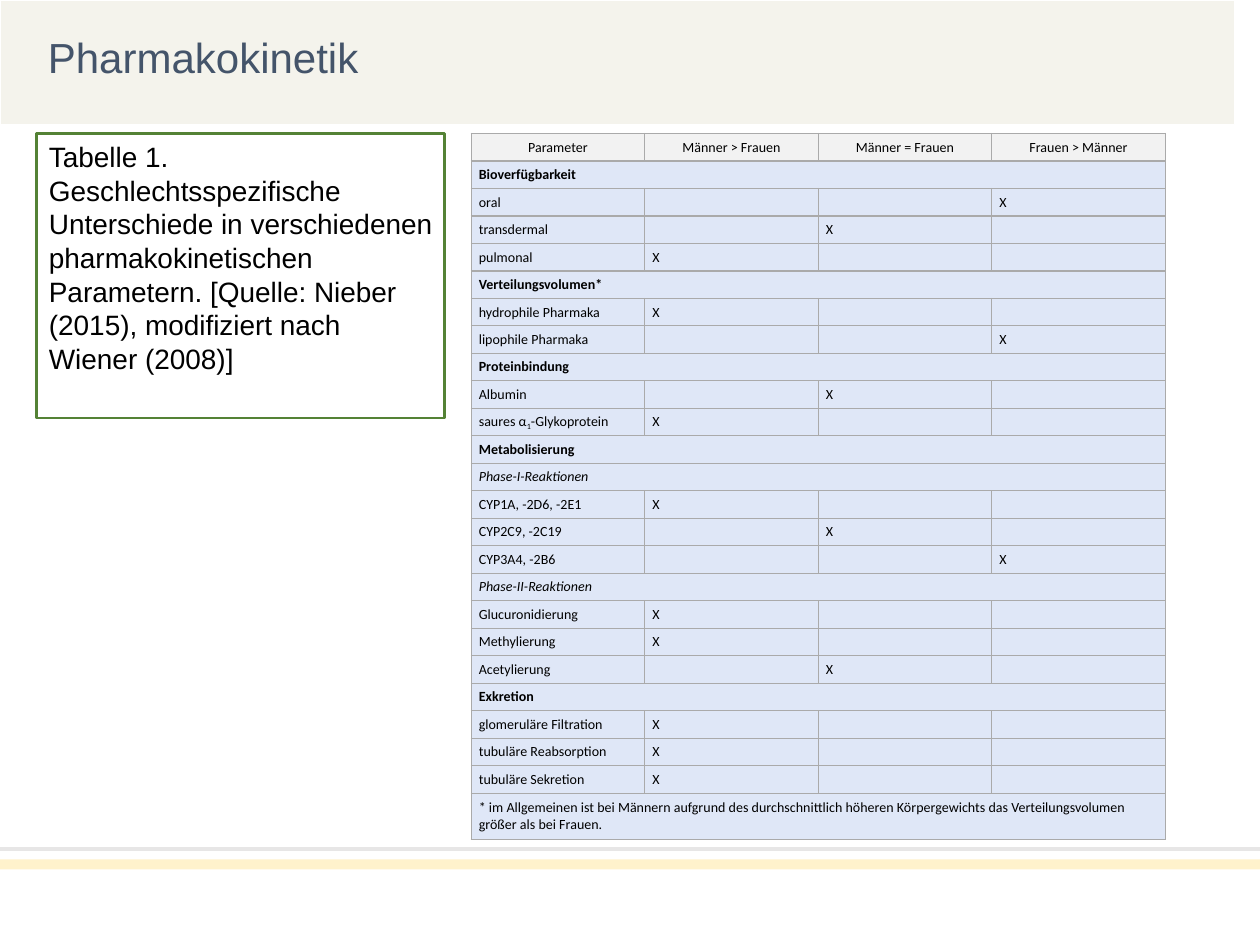
import pptx
import pptx.dml.color
import pptx.enum.shapes
import pptx.enum.text
import pptx.oxml
import pptx.oxml.ns
import pptx.util
from pptx.util import Inches, Pt


def color(hex_string):
    return pptx.dml.color.RGBColor.from_string(hex_string)


def add_rectangle(shapes, left, top, width, height, fill=None, line=None, line_width=0.75):
    shape = shapes.add_shape(pptx.enum.shapes.MSO_SHAPE.RECTANGLE,
                             Inches(left), Inches(top), Inches(width), Inches(height))
    shape.shadow.inherit = False
    if fill:
        shape.fill.solid()
        shape.fill.fore_color.rgb = color(fill)
    else:
        shape.fill.background()
    if line:
        shape.line.color.rgb = color(line)
        shape.line.width = Pt(line_width)
    else:
        shape.line.fill.background()
    return shape


SLIDE_WIDTH, SLIDE_HEIGHT = 10, 7.5
CONTENT_TOP = 1.06

presentation = pptx.Presentation()
presentation.slide_width = Inches(SLIDE_WIDTH)
presentation.slide_height = Inches(SLIDE_HEIGHT)
slide = presentation.slides.add_slide(presentation.slide_layouts[5])
shapes = slide.shapes

# Header band and footer stripes
add_rectangle(shapes, 0, 0, 0.98 * SLIDE_WIDTH, 0.99, "F4F3EC", "FFFFFF")
footer_line = shapes.add_connector(pptx.enum.shapes.MSO_CONNECTOR.STRAIGHT,
                                   0, Inches(6.74), Inches(SLIDE_WIDTH), Inches(6.74))
footer_line.line.color.rgb = color("E7E6E6")
footer_line.line.width = Pt(2)
pptx.oxml.ns.qn("a:effectLst")
footer_line._element.spPr.append(pptx.oxml.parse_xml(
    f'<a:effectLst {pptx.oxml.ns.nsdecls("a")}/>'))
add_rectangle(shapes, 0, 6.82, SLIDE_WIDTH, 0.08, "FFF2CC")

# Title, brought in front of the header band
title = shapes.title
title.left, title.top, title.width, title.height = map(Inches, (0.28, 0.2, 5.35, 0.5))
title.text_frame.text = "Pharmakokinetik"
title.text_frame.auto_size = pptx.enum.text.MSO_AUTO_SIZE.NONE
title.text_frame.vertical_anchor = pptx.enum.text.MSO_ANCHOR.MIDDLE
paragraph = title.text_frame.paragraphs[0]
paragraph.alignment = pptx.enum.text.PP_ALIGN.LEFT
paragraph.font.name = "Arial"
paragraph.font.size = Pt(24)
paragraph.font.color.rgb = color("44546A")
shapes._spTree.append(title._element)

# Table contents: label and column of the X, or the style of a full-width row
HEADERS = ["Parameter", "Männer > Frauen", "Männer = Frauen", "Frauen > Männer"]
MEN, EQUAL, WOMEN = 1, 2, 3
ROWS = [
    ("Bioverfügbarkeit", "bold"),
    ("oral", WOMEN),
    ("transdermal", EQUAL),
    ("pulmonal", MEN),
    ("Verteilungsvolumen*", "bold"),
    ("hydrophile Pharmaka", MEN),
    ("lipophile Pharmaka", WOMEN),
    ("Proteinbindung", "bold"),
    ("Albumin", EQUAL),
    ("saures α_1_-Glykoprotein", MEN),
    ("Metabolisierung", "bold"),
    ("Phase-I-Reaktionen", "italic"),
    ("CYP1A, -2D6, -2E1", MEN),
    ("CYP2C9, -2C19", EQUAL),
    ("CYP3A4, -2B6", WOMEN),
    ("Phase-II-Reaktionen", "italic"),
    ("Glucuronidierung", MEN),
    ("Methylierung", MEN),
    ("Acetylierung", EQUAL),
    ("Exkretion", "bold"),
    ("glomeruläre Filtration", MEN),
    ("tubuläre Reabsorption", MEN),
    ("tubuläre Sekretion", MEN),
    ("* im Allgemeinen ist bei Männern aufgrund des durchschnittlich höheren "
     "Körpergewichts das Verteilungsvolumen größer als bei Frauen.", "note"),
]
TABLE_WIDTH, TABLE_HEIGHT, NOTE_HEIGHT = 5.51, 5.61, 0.37

# Table grid: equal columns, equal rows above the taller note
table = shapes.add_table(len(ROWS) + 1, len(HEADERS), Inches(3.74), Inches(CONTENT_TOP),
                         Inches(TABLE_WIDTH), Inches(TABLE_HEIGHT)).table
table.first_row = table.horz_banding = False
for column in table.columns:
    column.width = Inches(TABLE_WIDTH / len(HEADERS))
for row in table.rows:
    row.height = Inches((TABLE_HEIGHT - NOTE_HEIGHT) / len(ROWS))
table.rows[len(ROWS)].height = Inches(NOTE_HEIGHT)

# Table cells
for row_index in range(len(ROWS) + 1):
    label, kind = ROWS[row_index - 1] if row_index else ("", "header")
    for column_index, header in enumerate(HEADERS):
        cell = table.cell(row_index, column_index)
        cell.margin_left = cell.margin_right = Inches(0.06)
        cell.margin_top = cell.margin_bottom = Inches(0.03)
        cell.vertical_anchor = pptx.enum.text.MSO_ANCHOR.MIDDLE
        for side in ("lnL", "lnR", "lnT", "lnB"):
            cell._tc.get_or_add_tcPr().append(pptx.oxml.parse_xml(
                f'<a:{side} {pptx.oxml.ns.nsdecls("a")} w="{Pt(0.75)}">'
                f'<a:solidFill><a:srgbClr val="AAAAAA"/></a:solidFill></a:{side}>'))
        cell.fill.solid()
        cell.fill.fore_color.rgb = color("F2F2F2" if kind == "header" else "DFE7F7")

        paragraph = cell.text_frame.paragraphs[0]
        paragraph.font.name = "Calibri"
        paragraph.font.size = Pt(8)
        paragraph.font.color.rgb = color("000000")
        if kind == "header":
            paragraph.alignment = pptx.enum.text.PP_ALIGN.CENTER
            paragraph.add_run().text = header
        elif column_index == 0:
            paragraph.font.bold = kind == "bold"
            paragraph.font.italic = kind == "italic"
            # Text between underscores is a subscript
            for part_index, part in enumerate(label.split("_")):
                run = paragraph.add_run()
                run.text = part
                if part_index % 2:
                    run._r.get_or_add_rPr().set("baseline", "-25000")
        elif column_index == kind:
            paragraph.add_run().text = "X"
    if kind in ("bold", "italic", "note"):
        table.cell(row_index, 0).merge(table.cell(row_index, len(HEADERS) - 1))

# Caption box
caption = add_rectangle(shapes, 0.29, CONTENT_TOP, 3.24, 2.26, line="548235", line_width=1.5)
caption.text_frame.word_wrap = True
caption.text_frame.vertical_anchor = pptx.enum.text.MSO_ANCHOR.TOP
caption.text_frame.text = (
    "Tabelle 1. Geschlechtsspezifische Unterschiede in verschiedenen "
    "pharmakokinetischen Parametern. [Quelle: Nieber (2015), modifiziert nach Wiener (2008)]")
paragraph = caption.text_frame.paragraphs[0]
paragraph.alignment = pptx.enum.text.PP_ALIGN.LEFT
paragraph.font.name = "Arial"
paragraph.font.size = Pt(16)
paragraph.font.color.rgb = color("000000")

presentation.save("out.pptx")
